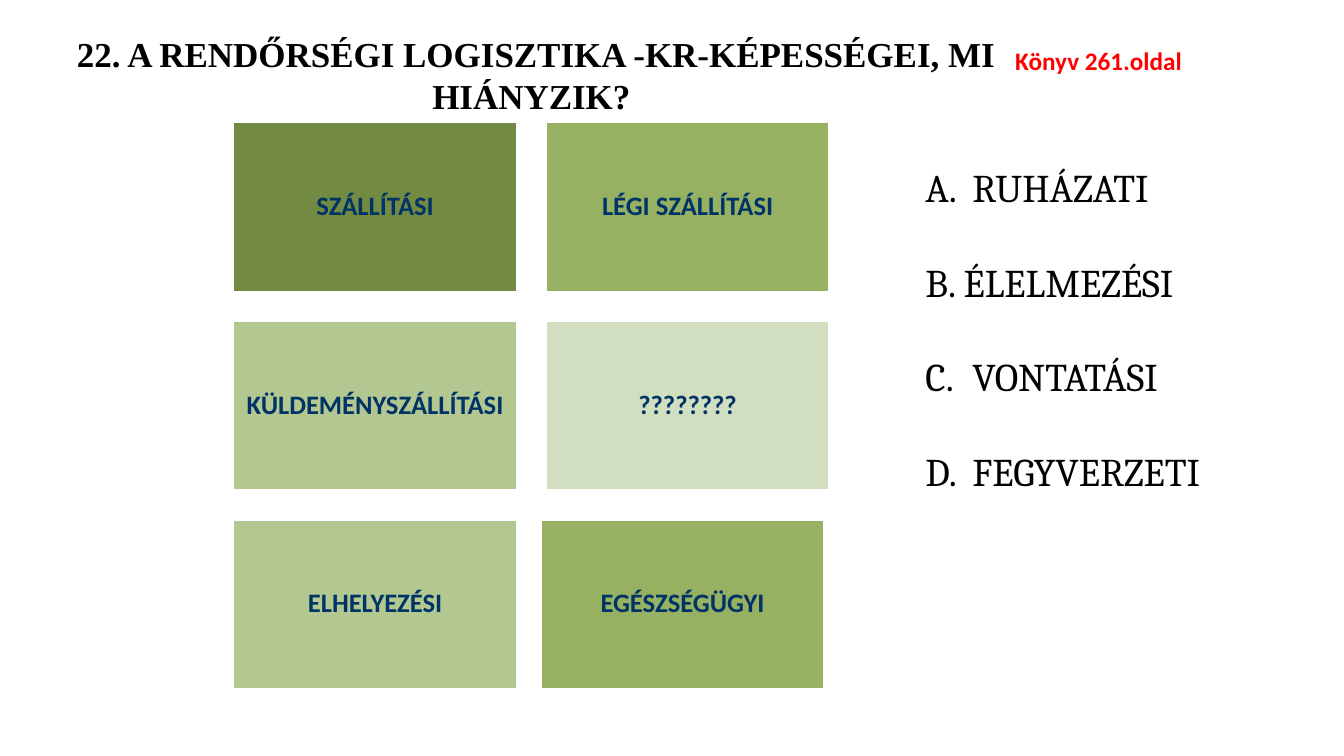
from pptx import Presentation
from pptx import util as u
from pptx.dml.color import RGBColor
from pptx.enum import shapes, text
from pptx.oxml.ns import qn
from lxml import etree

BLACK = RGBColor(0x00, 0x00, 0x00)
WHITE = RGBColor(0xFF, 0xFF, 0xFF)
RED = RGBColor(0xFF, 0x00, 0x00)
NAVY = RGBColor(0x00, 0x33, 0x66)
MOSS = RGBColor(0x73, 0x8A, 0x42)
LEAF = RGBColor(0x95, 0xB1, 0x61)
SAGE = RGBColor(0xB3, 0xC7, 0x91)
MIST = RGBColor(0xD2, 0xDE, 0xC0)

# Grid of skill cells, in inches
LEFT, TOP = 2.31, 1.21
WIDE, HIGH = 2.82, 1.69
GAP = 0.28
INDENT = u.Inches(0.38)

# Label, fill, shift to the right
SKILLS = [
    [("SZÁLLÍTÁSI", MOSS, 0), ("LÉGI SZÁLLÍTÁSI", LEAF, 0)],
    [("KÜLDEMÉNYSZÁLLÍTÁSI", SAGE, 0), ("????????", MIST, 0)],
    [("ELHELYEZÉSI", SAGE, 0), ("EGÉSZSÉGÜGYI", LEAF, -0.05)],
]
CHOICES = [" RUHÁZATI", "ÉLELMEZÉSI", " VONTATÁSI", " FEGYVERZETI"]


def style(para, face, size, color, bold=False):
    for run in para.runs:
        font = run.font
        font.name, font.size, font.bold = face, u.Pt(size), bold
        font.color.rgb = color


def add_text(slide, box, words):
    """Add a wrapping text box, one paragraph per line of words."""
    frame = slide.shapes.add_textbox(*map(u.Inches, box)).text_frame
    frame.word_wrap = True
    frame.text = words
    return frame


def add_cell(slide, row, col, label, fill, shift):
    x = LEFT + col * (WIDE + GAP) + shift
    y = TOP + row * (HIGH + GAP)
    cell = slide.shapes.add_shape(
        shapes.MSO_SHAPE.RECTANGLE, *map(u.Inches, (x, y, WIDE, HIGH)))
    cell.shadow.inherit = False
    cell.fill.solid()
    cell.fill.fore_color.rgb = fill
    cell.line.color.rgb = WHITE
    cell.line.width = u.Pt(2)
    frame = cell.text_frame
    frame.word_wrap = True
    frame.vertical_anchor = text.MSO_ANCHOR.MIDDLE
    frame.margin_left = frame.margin_right = u.Inches(0.08)
    frame.margin_top = frame.margin_bottom = u.Inches(0.08)
    frame.text = label
    para = frame.paragraphs[0]
    para.alignment = text.PP_ALIGN.CENTER
    para.line_spacing = 0.9
    style(para, "Calibri", 19, NAVY, True)


def letter(para):
    """Number the paragraph A., B., C. with a hanging indent."""
    props = para._p.get_or_add_pPr()
    props.set("marL", str(INDENT))
    props.set("indent", str(-INDENT))
    mark = etree.SubElement(props, qn("a:buAutoNum"))
    mark.set("type", "alphaUcPeriod")


def add_list(slide, box, items):
    frame = add_text(slide, box, "\n".join(items))
    for para in frame.paragraphs:
        para.space_after = u.Pt(34)
        letter(para)
        style(para, "Cambria", 28, BLACK)


def main():
    deck = Presentation()
    deck.slide_width, deck.slide_height = u.Inches(13.33), u.Inches(7.5)
    slide = deck.slides.add_slide(deck.slide_layouts[6])

    title = add_text(
        slide, (0.47, 0.27, 9.6, 0.94),
        " 22. A RENDŐRSÉGI LOGISZTIKA -KR-KÉPESSÉGEI, MI HIÁNYZIK?")
    title.paragraphs[0].alignment = text.PP_ALIGN.CENTER
    style(title.paragraphs[0], "Times New Roman", 25, BLACK, True)

    for row, cells in enumerate(SKILLS):
        for col, cell in enumerate(cells):
            add_cell(slide, row, col, *cell)

    add_list(slide, (9.08, 1.57, 3.61, 3.4), CHOICES)
    page = add_text(slide, (9.97, 0.4, 2.89, 0.4), "Könyv 261.oldal")
    style(page.paragraphs[0], "Calibri", 18, RED, True)
    deck.save("out.pptx")


if __name__ == "__main__":
    main()
